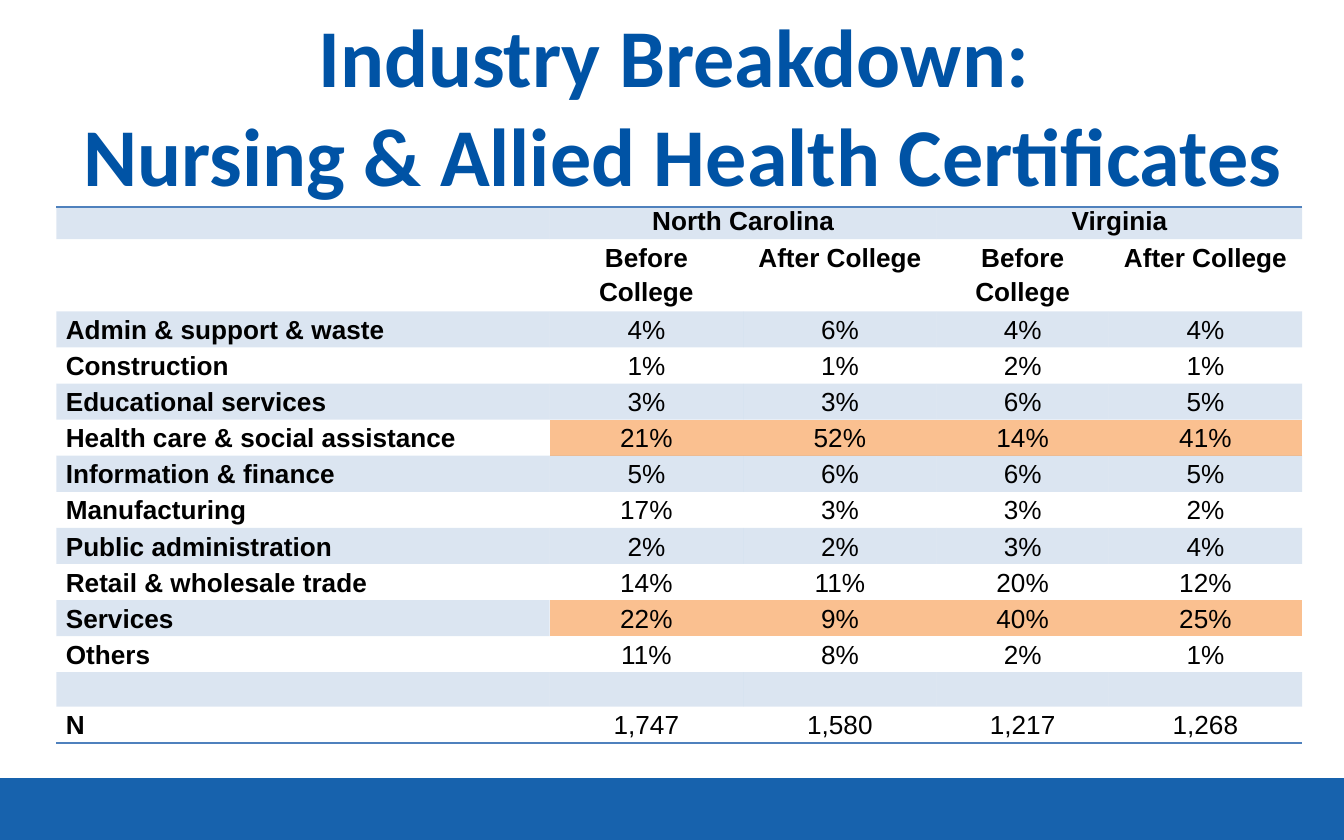
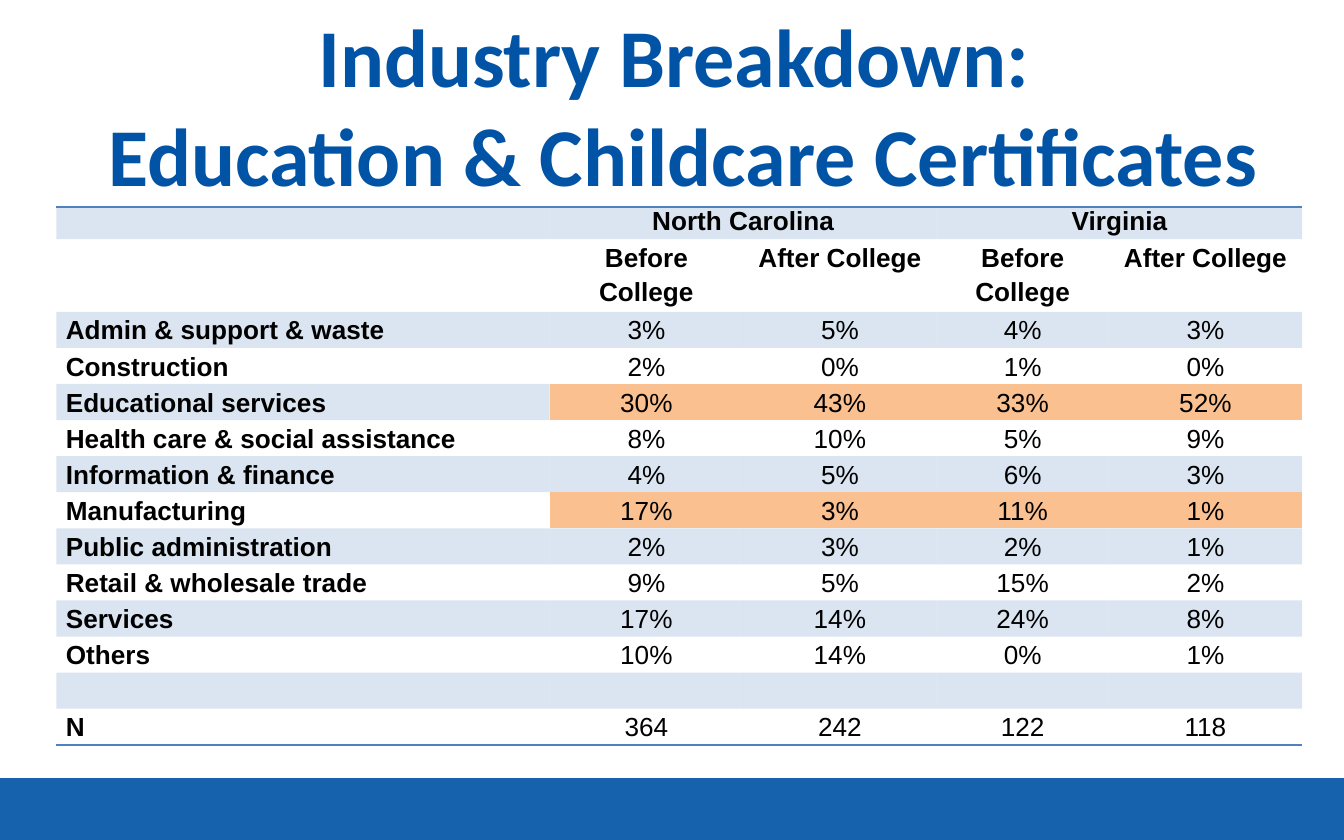
from lxml import etree
from pptx import Presentation
from pptx.dml.color import RGBColor
from pptx.enum.shapes import MSO_SHAPE
from pptx.enum.text import MSO_ANCHOR, PP_ALIGN
from pptx.oxml.ns import qn
from pptx.util import Inches, Pt

RECTANGLE = MSO_SHAPE.RECTANGLE
MIDDLE = MSO_ANCHOR.MIDDLE
LEFT, CENTER = PP_ALIGN.LEFT, PP_ALIGN.CENTER

BRAND_BLUE = "0053A5"
TABLE_BLUE = "4F81BD"
HIGHLIGHT = "FAC090"
BLACK = "000000"
PLAIN_TABLE_STYLE = "{2D5ABB26-0587-4C30-8999-92F81FD0307C}"

COLUMN_WIDTHS = [3.67, 1.44, 1.44, 1.28, 1.44]
STATES = ["", "North Carolina", "", "Virginia", ""]
PERIODS = ["", "Before College", "After College", "Before College", "After College"]
INDUSTRIES = [
    "Admin & support & waste", "Construction", "Educational services",
    "Health care & social assistance", "Information & finance", "Manufacturing",
    "Public administration", "Retail & wholesale trade", "Services", "Others",
]

BREAKDOWNS = [
    {
        "program": "Nursing & Allied Health Certificates",
        "shares": [
            (4, 6, 4, 4), (1, 1, 2, 1), (3, 3, 6, 5), (21, 52, 14, 41), (5, 6, 6, 5),
            (17, 3, 3, 2), (2, 2, 3, 4), (14, 11, 20, 12), (22, 9, 40, 25), (11, 8, 2, 1),
        ],
        "counts": ["1,747", "1,580", "1,217", "1,268"],
        "highlights": ["Health care & social assistance", "Services"],
        "header_heights": [0.24, 0.5],
        "table_height": 3.82,
    },
    {
        "program": "Education & Childcare Certificates",
        "shares": [
            (3, 5, 4, 3), (2, 0, 1, 0), (30, 43, 33, 52), (8, 10, 5, 9), (4, 5, 6, 3),
            (17, 3, 11, 1), (2, 3, 2, 1), (9, 5, 15, 2), (17, 14, 24, 8), (10, 14, 0, 1),
        ],
        "counts": ["364", "242", "122", "118"],
        "highlights": ["Educational services", "Manufacturing"],
        "header_heights": [0.24, 0.54],
        "table_height": 4.0,
    },
]


def set_fill(fill, color, opacity=100):
    fill.solid()
    fill.fore_color.rgb = RGBColor.from_string(color)
    if opacity < 100:
        color_element = fill._xPr.find(qn("a:solidFill"))[0]
        etree.SubElement(color_element, qn("a:alpha"), val=str(opacity * 1000))


def write_text(frame, text, size=14, font="Arial", color=BLACK, bold=False,
               align=LEFT, spacing=None):
    paragraph = frame.paragraphs[0]
    paragraph.alignment = align
    if spacing:
        paragraph.line_spacing = spacing
    if not text:
        etree.SubElement(paragraph._p, qn("a:endParaRPr"), sz=str(size * 100))
        return
    for index, line in enumerate(text.split("\n")):
        if index:
            paragraph.add_line_break()
        run = paragraph.add_run()
        run.text = line
        run.font.size = Pt(size)
        run.font.name = font
        run.font.bold = bold
        run.font.color.rgb = RGBColor.from_string(color)


def add_border(cell, side):
    line = etree.Element(qn(f"a:{side}"), w=str(Pt(1)))
    solid_fill = etree.SubElement(line, qn("a:solidFill"))
    etree.SubElement(solid_fill, qn("a:srgbClr"), val=TABLE_BLUE)
    cell._tc.get_or_add_tcPr().insert(0, line)


class Deck:
    def __init__(self):
        self.presentation = Presentation()
        self.presentation.slide_width = Inches(10)
        self.presentation.slide_height = Inches(6.25)
        self.slide = None

    def add_slide(self, title):
        self.slide = self.presentation.slides.add_slide(self.presentation.slide_layouts[6])
        self.add_band()
        self.add_title(title)

    def add_band(self):
        band = self.slide.shapes.add_shape(
            RECTANGLE, Inches(0), Inches(5.79), Inches(10), Inches(0.46))
        band.shadow.inherit = False
        band.line.fill.background()
        set_fill(band.fill, BRAND_BLUE, 91)

    def add_title(self, title):
        shape = self.slide.shapes.add_textbox(
            Inches(0.42), Inches(0.42), Inches(9.33), Inches(0.71))
        frame = shape.text_frame
        frame.word_wrap = True
        frame.vertical_anchor = MIDDLE
        write_text(frame, title, size=44, font="Calibri", color=BRAND_BLUE,
                   bold=True, align=CENTER)

    def add_table(self, rows, highlights, header_heights, height):
        shape = self.slide.shapes.add_table(
            len(rows), len(COLUMN_WIDTHS), Inches(0.42), Inches(1.54),
            Inches(sum(COLUMN_WIDTHS)), Inches(height))
        shape._element.find(".//" + qn("a:tableStyleId")).text = PLAIN_TABLE_STYLE
        table = shape.table
        table.first_row = False
        table.horz_banding = False
        for column, width in zip(table.columns, COLUMN_WIDTHS):
            column.width = Inches(width)
        body_count = len(rows) - len(header_heights)
        body_height = (height - sum(header_heights)) / body_count
        for row, row_height in zip(table.rows, header_heights + [body_height] * body_count):
            row.height = Inches(row_height)
        for row_index, values in enumerate(rows):
            for column_index, text in enumerate(values):
                cell = table.cell(row_index, column_index)
                self.format_cell(cell, row_index, column_index,
                                 column_index > 0 and values[0] in highlights)
                write_text(cell.text_frame, text,
                           bold=row_index < len(header_heights) or column_index == 0,
                           align=CENTER if column_index else LEFT,
                           spacing=1.15 if row_index and text else None)
                if row_index == 0:
                    add_border(cell, "lnT")
                elif row_index == len(rows) - 1:
                    add_border(cell, "lnB")
        for first_column in (1, 3):
            table.cell(0, first_column).merge(table.cell(0, first_column + 1))

    def format_cell(self, cell, row_index, column_index, highlighted):
        cell.margin_left = cell.margin_right = Inches(0.07)
        cell.margin_top = cell.margin_bottom = Inches(0)
        if highlighted:
            set_fill(cell.fill, HIGHLIGHT)
        elif row_index % 2 == 0:
            set_fill(cell.fill, TABLE_BLUE, 20)
        else:
            cell.fill.background()


def build_rows(shares, counts):
    body = [[industry] + [f"{share}%" for share in values]
            for industry, values in zip(INDUSTRIES, shares)]
    return [STATES, PERIODS, *body, [""] * len(COLUMN_WIDTHS), ["N"] + counts]


def main():
    deck = Deck()
    for breakdown in BREAKDOWNS:
        deck.add_slide("Industry Breakdown: \n" + breakdown["program"])
        deck.add_table(build_rows(breakdown["shares"], breakdown["counts"]),
                       breakdown["highlights"], breakdown["header_heights"],
                       breakdown["table_height"])
    deck.presentation.save("out.pptx")


if __name__ == "__main__":
    main()
